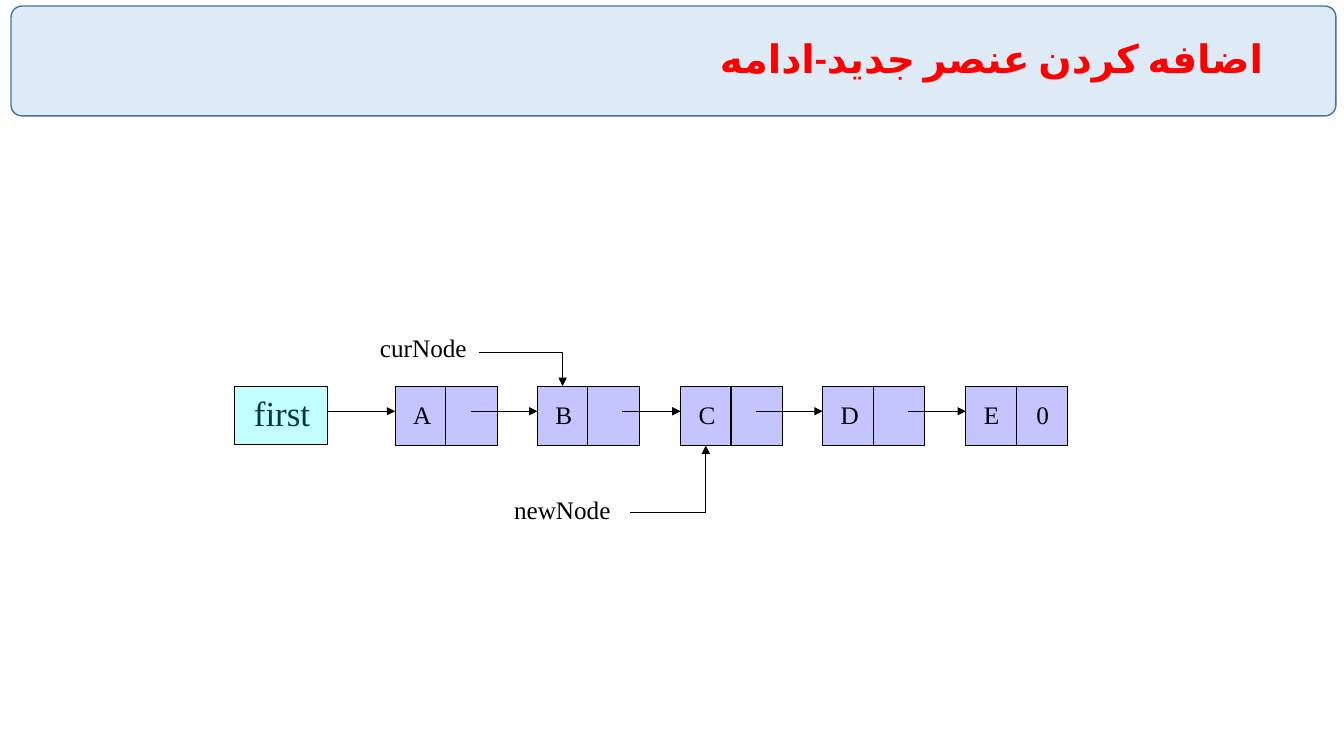
"""Build a slide that shows a linked list with its node pointers."""
import pptx
import pptx.util
import pptx.oxml
import pptx.dml.color
import pptx.enum.shapes
import pptx.enum.text
import pptx.oxml.ns
import lxml.etree

SCALE = 9144
COLORS = {"banner": "DEEBF7", "edge": "43739E", "title": "FF0000",
          "node": "0000FF", "first": "00FFFF", "ink": "000000"}
SERIF, SANS = "Times New Roman", "Calibri"
TOP, MID, LOW = 383, 408, 442
WIDE, HALF = 101, 50


def px(*sizes):
    return [pptx.util.Emu(size * SCALE) for size in sizes]


def color(name):
    return pptx.dml.color.RGBColor.from_string(COLORS[name])


def add_node(parent, tag, **attrs):
    return lxml.etree.SubElement(parent, pptx.oxml.ns.qn(tag), attrs)


def style(font, face, size, name):
    font.name = face
    font.size = pptx.util.Pt(size)
    font.color.rgb = color(name)


def box(slide, area, fill, edge="ink", width=0.75, alpha=None, kind="RECTANGLE"):
    preset = getattr(pptx.enum.shapes.MSO_SHAPE, kind)
    shape = slide.shapes.add_shape(preset, *px(*area))
    shape.shadow.inherit = False
    shape.fill.solid()
    shape.fill.fore_color.rgb = color(fill)
    shape.line.color.rgb = color(edge)
    shape.line.width = pptx.util.Pt(width)
    if alpha:
        paint = shape.fill._xPr.find(".//" + pptx.oxml.ns.qn("a:srgbClr"))
        add_node(paint, "a:alpha", val=str(alpha * 1000))
    return shape


def line(slide, start, end, arrow=False):
    straight = pptx.enum.shapes.MSO_CONNECTOR.STRAIGHT
    link = slide.shapes.add_connector(straight, *px(*start, *end))
    link.line.color.rgb = color("ink")
    link.line.width = pptx.util.Pt(0.75)
    if arrow:
        add_node(link.line._get_or_add_ln(), "a:tailEnd", type="triangle")
    add_node(link._element.spPr, "a:effectLst")


def label(slide, text, area, size=18):
    frame = slide.shapes.add_textbox(*px(*area)).text_frame
    frame.word_wrap = False
    frame.auto_size = pptx.enum.text.MSO_AUTO_SIZE.SHAPE_TO_FIT_TEXT
    frame.text = text
    style(frame.paragraphs[0].runs[0].font, SERIF, size, "ink")


def header(slide, text):
    banner = box(slide, (11, 6, 1314, 109), "banner", "edge", 1,
                 kind="ROUNDED_RECTANGLE")
    banner.adjustments[0] = 0.1
    title = slide.shapes.title
    title.left, title.top, title.width, title.height = px(24, 15, 1239, 90)
    banner._element.addnext(title._element)
    frame = title.text_frame
    frame.text = text
    frame.vertical_anchor = pptx.enum.text.MSO_ANCHOR.MIDDLE
    para = frame.paragraphs[0]
    para.alignment = pptx.enum.text.PP_ALIGN.RIGHT
    para.line_spacing = 0.9
    para._p.get_or_add_pPr().set("rtl", "1")
    run = para.runs[0]
    style(run.font, SANS, 28, "title")
    run.font.bold = True
    props = run._r.get_or_add_rPr()
    props.set("lang", "fa-IR")
    add_node(props, "a:cs", typeface=SANS)


def node(slide, left, name):
    box(slide, (left, TOP, WIDE, LOW - TOP), "node", alpha=23)
    line(slide, (left + HALF, TOP), (left + HALF, LOW))
    label(slide, name, (left + 8, 391, 38, 40))


def pointer(slide, name, area, start, turn, end):
    label(slide, name, area)
    line(slide, start, turn)
    line(slide, turn, end, arrow=True)


def main():
    deck = pptx.Presentation()
    deck.slide_width, deck.slide_height = px(1333, 750)
    slide = deck.slides.add_slide(deck.slide_layouts[5])
    header(slide, "اضافه کردن عنصر جديد-ادامه")

    label(slide, "first", (242, TOP, 76, 52), 25)
    box(slide, (233, TOP, 92, 58), "first", alpha=23)

    names = "ABCDE"
    lefts = [392 + 283 * step // 2 for step in range(len(names))]
    for left, name in zip(lefts, names):
        node(slide, left, name)
    label(slide, "0", (1018, 391, 33, 40))
    for start, end in zip((325, 467, 617, 750, 901), lefts):
        line(slide, (start, MID), (end, MID), arrow=True)

    pointer(slide, "curNode", (367, 325, 106, 40),
            (475, 350), (558, 350), (558, TOP))
    pointer(slide, "newNode", (500, 485, 116, 40),
            (625, 508), (700, 508), (700, LOW))
    deck.save("out.pptx")


if __name__ == "__main__":
    main()
